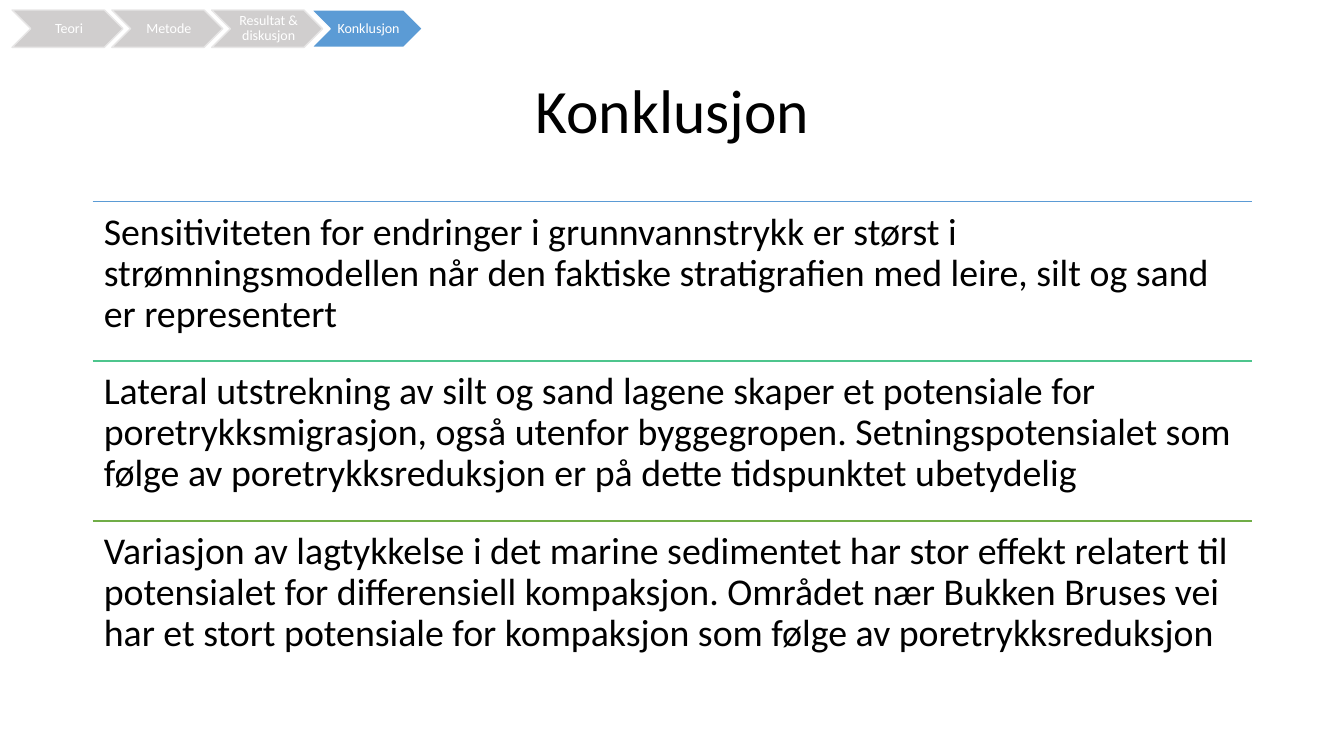
from dataclasses import dataclass

from lxml import etree
from pptx import Presentation
from pptx.dml.color import RGBColor
from pptx.enum import shapes, text
from pptx.oxml.ns import qn
from pptx.util import Inches, Pt


@dataclass(frozen=True)
class Theme:
    font: str = "Calibri"
    title_size: int = 44
    body_size: int = 27
    step_size: int = 10
    ink: str = "000000"
    white: str = "FFFFFF"
    step_fill: str = "D0CECE"
    step_line: str = "E7E6E6"
    active_fill: str = "5B9BD5"
    rules: tuple = ("5B9BD5", "4DC58D", "70AD47")


theme = Theme()


def write(shape, wording, size, color, align, anchor, insets, space_after=0):
    """Fill a shape with one formatted paragraph; insets are left, top, right, bottom."""
    frame = shape.text_frame
    frame.text = wording
    frame.word_wrap = True
    frame.vertical_anchor = anchor
    (frame.margin_left, frame.margin_top,
     frame.margin_right, frame.margin_bottom) = [Inches(inset) for inset in insets]
    paragraph = frame.paragraphs[0]
    paragraph.alignment = align
    paragraph.line_spacing = 0.9
    paragraph.space_after = Pt(space_after)
    font = paragraph.runs[0].font
    font.name = theme.font
    font.size = Pt(size)
    font.color.rgb = RGBColor.from_string(color)


presentation = Presentation()
presentation.slide_width = Inches(13.33)
presentation.slide_height = Inches(7.5)
slide = presentation.slides.add_slide(presentation.slide_layouts[6])

left, width = 0.92, 11.5

title = slide.shapes.add_textbox(Inches(left), Inches(0.4), Inches(width), Inches(1.45))
write(title, "Konklusjon", theme.title_size, theme.ink,
      text.PP_ALIGN.CENTER, text.MSO_ANCHOR.MIDDLE, (0.1, 0.05, 0.1, 0.05))

# Progress chevrons, with the current step highlighted
steps = ["Teori", "Metode", "Resultat & diskusjon", "Konklusjon"]
current_step = "Konklusjon"
for index, step in enumerate(steps):
    active = step == current_step
    chevron = slide.shapes.add_shape(
        shapes.MSO_SHAPE.CHEVRON,
        Inches(0.12 + 0.99 * index), Inches(0.1), Inches(1.1), Inches(0.37))
    chevron.shadow.inherit = False
    chevron.fill.solid()
    chevron.fill.fore_color.rgb = RGBColor.from_string(
        theme.active_fill if active else theme.step_fill)
    chevron.line.color.rgb = RGBColor.from_string(
        theme.white if active else theme.step_line)
    chevron.line.width = Pt(1)
    write(chevron, step, theme.step_size, theme.white, text.PP_ALIGN.CENTER,
          text.MSO_ANCHOR.MIDDLE, (0.04, 0.01, 0.01, 0.01), space_after=3.5)

# Conclusions, each under a coloured rule
conclusions = [
    "Sensitiviteten for endringer i grunnvannstrykk er størst i strømningsmodellen "
    "når den faktiske stratigrafien med leire, silt og sand er representert",
    "Lateral utstrekning av silt og sand lagene skaper et potensiale for "
    "poretrykksmigrasjon, også utenfor byggegropen. Setningspotensialet som følge av "
    "poretrykksreduksjon er på dette tidspunktet ubetydelig",
    "Variasjon av lagtykkelse i det marine sedimentet har stor effekt relatert til "
    "potensialet for differensiell kompaksjon. Området nær Bukken Bruses vei har et "
    "stort potensiale for kompaksjon som følge av poretrykksreduksjon",
]
row_height = 1.585
for index, (conclusion, color) in enumerate(zip(conclusions, theme.rules)):
    top = Inches(round(2 + row_height * index, 2))
    rule = slide.shapes.add_connector(
        shapes.MSO_CONNECTOR.STRAIGHT, Inches(left), top, Inches(left + width), top)
    rule.line.color.rgb = RGBColor.from_string(color)
    rule.line.width = Pt(1)
    etree.SubElement(rule._element.spPr, qn("a:effectLst"))
    box = slide.shapes.add_textbox(Inches(left), top, Inches(width), Inches(1.59))
    write(box, conclusion, theme.body_size, theme.ink, text.PP_ALIGN.LEFT,
          text.MSO_ANCHOR.TOP, (0.11, 0.11, 0.11, 0.11), space_after=9.5)

presentation.save("out.pptx")
